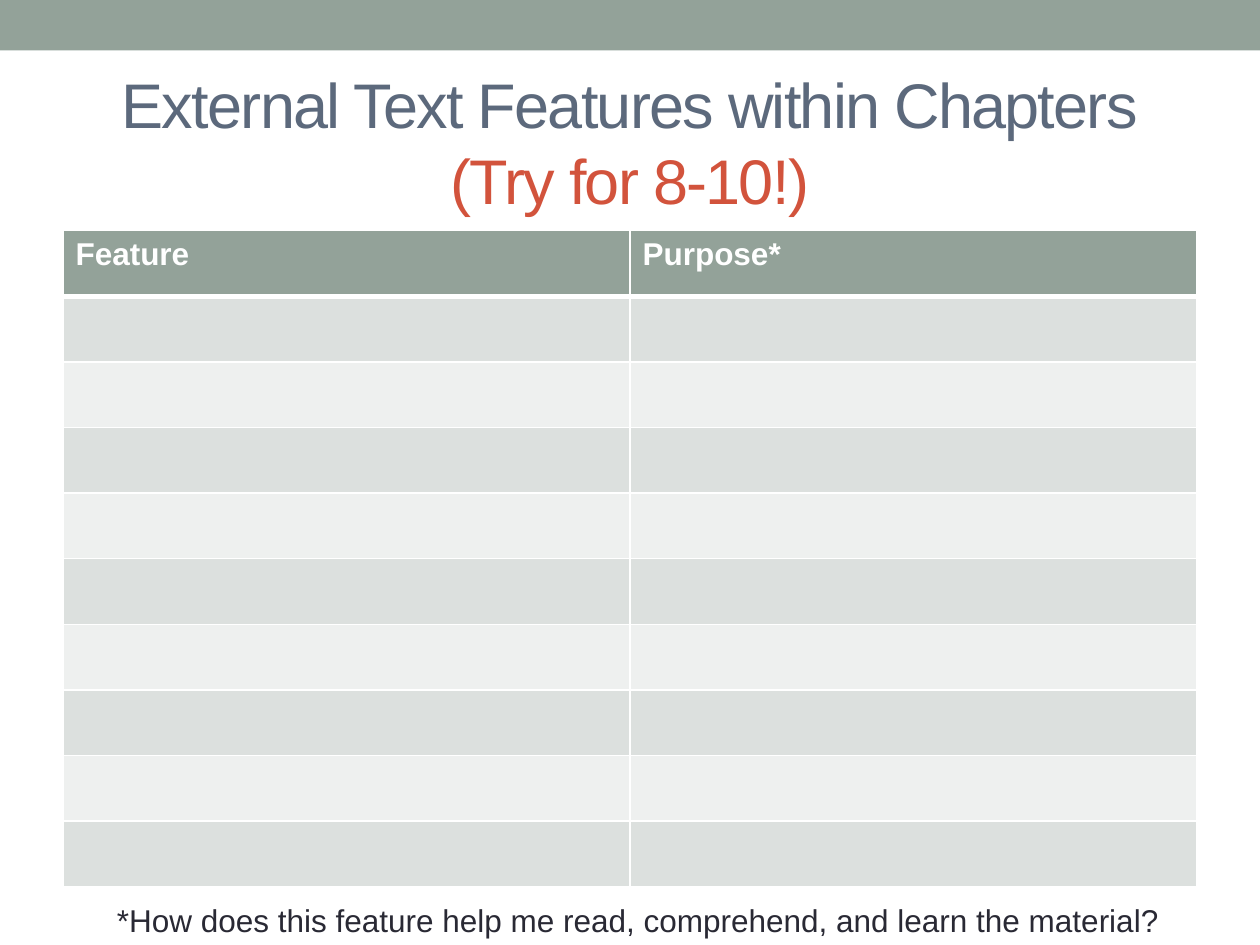
from lxml.etree import SubElement
from pptx import Presentation
from pptx.dml.color import RGBColor
from pptx.enum.shapes import MSO_SHAPE
from pptx.enum.text import MSO_ANCHOR, MSO_AUTO_SIZE, PP_ALIGN
from pptx.oxml.ns import qn
from pptx.util import Inches, Pt

TITLE = [("External Text Features within Chapters", "slate"), ("(Try for 8-10!)", "red")]
HEADERS = ["Feature", "Purpose*"]
BLANK_ROWS = 9
FOOTNOTE = "*How does this feature help me read, comprehend, and learn the material?"
COLORS = {
    "sage": "93A299", "slate": "5C697C", "red": "D2533C", "ink": "292934",
    "white": "FFFFFF", "band_dark": "DCE0DE", "band_light": "EEF0EF",
}
TABLE_BOX = (0.5, 1.83, 9, 5.21)


def rgb(name):
    return RGBColor.from_string(COLORS[name])


def style_run(r, size, color, bold=False):
    r.font.name = "Arial"
    r.font.size = Pt(size)
    r.font.bold = bold
    r.font.color.rgb = rgb(color)


def set_border(cell, side, width):
    ln = SubElement(cell._tc.get_or_add_tcPr(), qn(f"a:ln{side}"), w=str(Pt(width)))
    fill = SubElement(ln, qn("a:solidFill"))
    SubElement(fill, qn("a:srgbClr"), val=COLORS["white"])


prs = Presentation()
prs.slide_width, prs.slide_height = Inches(10), Inches(7.5)
s = prs.slides.add_slide(prs.slide_layouts[5])

# Top band
band = s.shapes.add_shape(MSO_SHAPE.RECTANGLE, 0, 0, prs.slide_width, Inches(0.4))
band.shadow.inherit = False
band.fill.solid()
band.fill.fore_color.rgb = rgb("sage")
band.line.fill.background()

# Title, two lines in one paragraph
title = s.shapes.title
title.left, title.top, title.width, title.height = map(Inches, (0.5, 0.58, 9, 1.08))
tf = title.text_frame
tf.auto_size = MSO_AUTO_SIZE.NONE
tf.vertical_anchor = MSO_ANCHOR.MIDDLE
p = tf.paragraphs[0]
p.text = "\v".join(text for text, _ in TITLE)
p.alignment = PP_ALIGN.CENTER
for r, (_, color) in zip(p.runs, TITLE):
    style_run(r, 36, color)
    r.font._element.set("spc", "-100")

# Table to fill in
row_count = BLANK_ROWS + 1
table = s.shapes.add_table(row_count, len(HEADERS), *map(Inches, TABLE_BOX)).table
for row in table.rows:
    row.height = Inches(TABLE_BOX[3] / row_count)
for i in range(row_count):
    fill = "sage" if i == 0 else "band_dark" if i % 2 else "band_light"
    for j, header in enumerate(HEADERS):
        cell = table.cell(i, j)
        widths = {"L": 1, "R": 1, "T": 3 if i == 1 else 1, "B": 3 if i == 0 else 1}
        for side, width in widths.items():
            set_border(cell, side, width)
        cell.fill.solid()
        cell.fill.fore_color.rgb = rgb(fill)
        if i == 0:
            cell.text_frame.text = header
            style_run(cell.text_frame.paragraphs[0].runs[0], 18, "white", bold=True)

# Footnote
note = s.shapes.add_textbox(*map(Inches, (0.83, 7.1, 8.55, 0.4)))
tf = note.text_frame
tf.word_wrap = False
tf.auto_size = MSO_AUTO_SIZE.SHAPE_TO_FIT_TEXT
tf.text = FOOTNOTE
style_run(tf.paragraphs[0].runs[0], 18, "ink")

prs.save("out.pptx")
